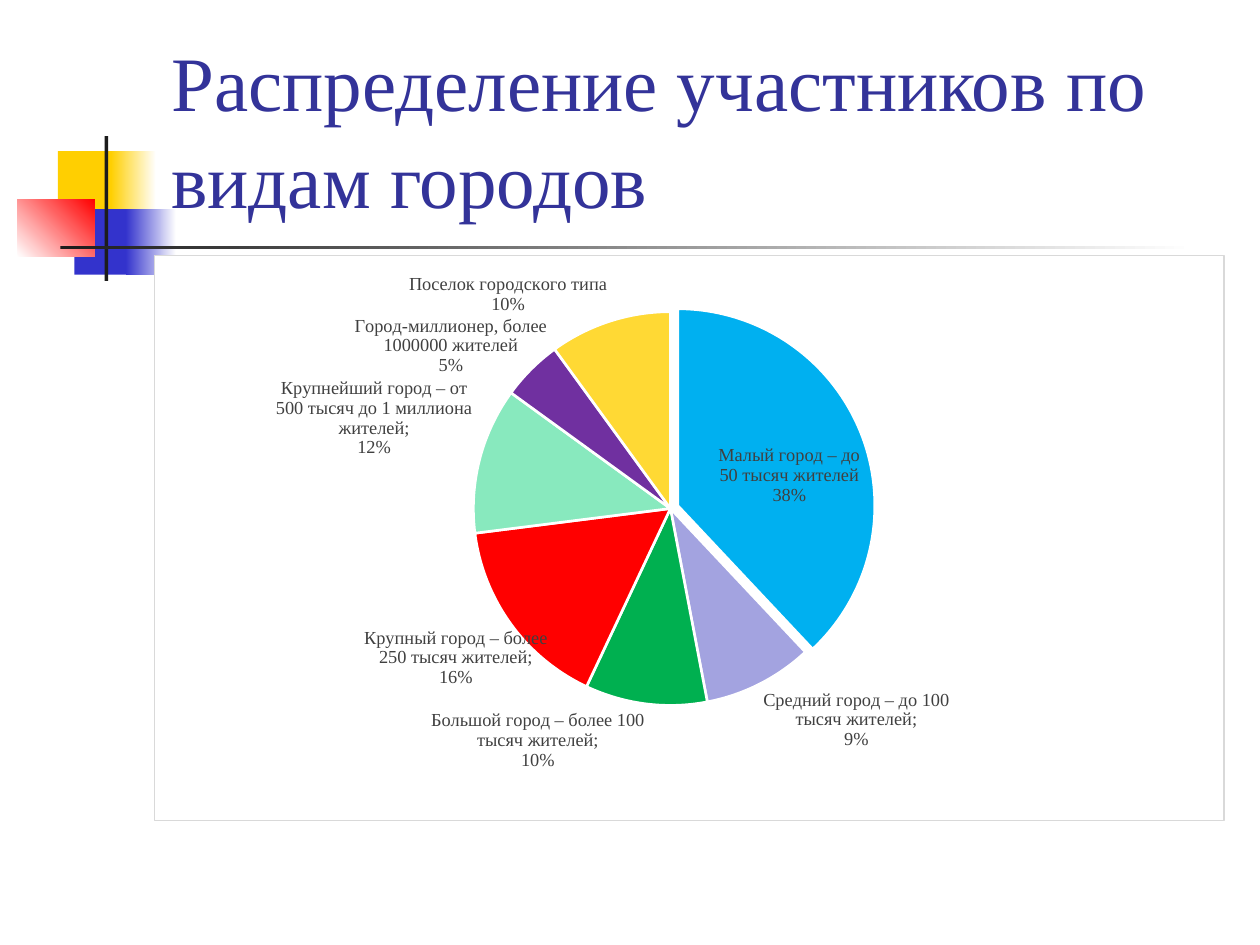
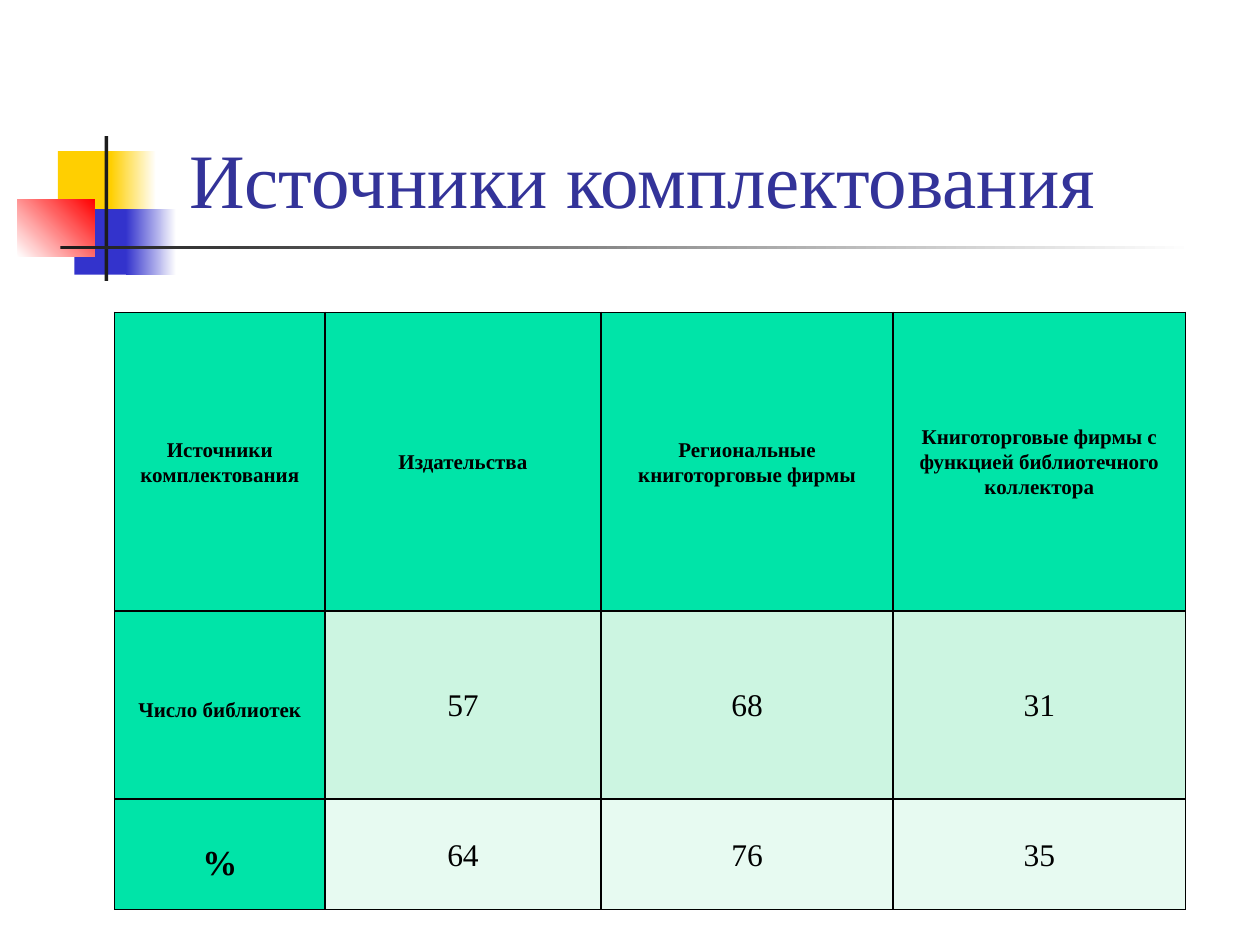
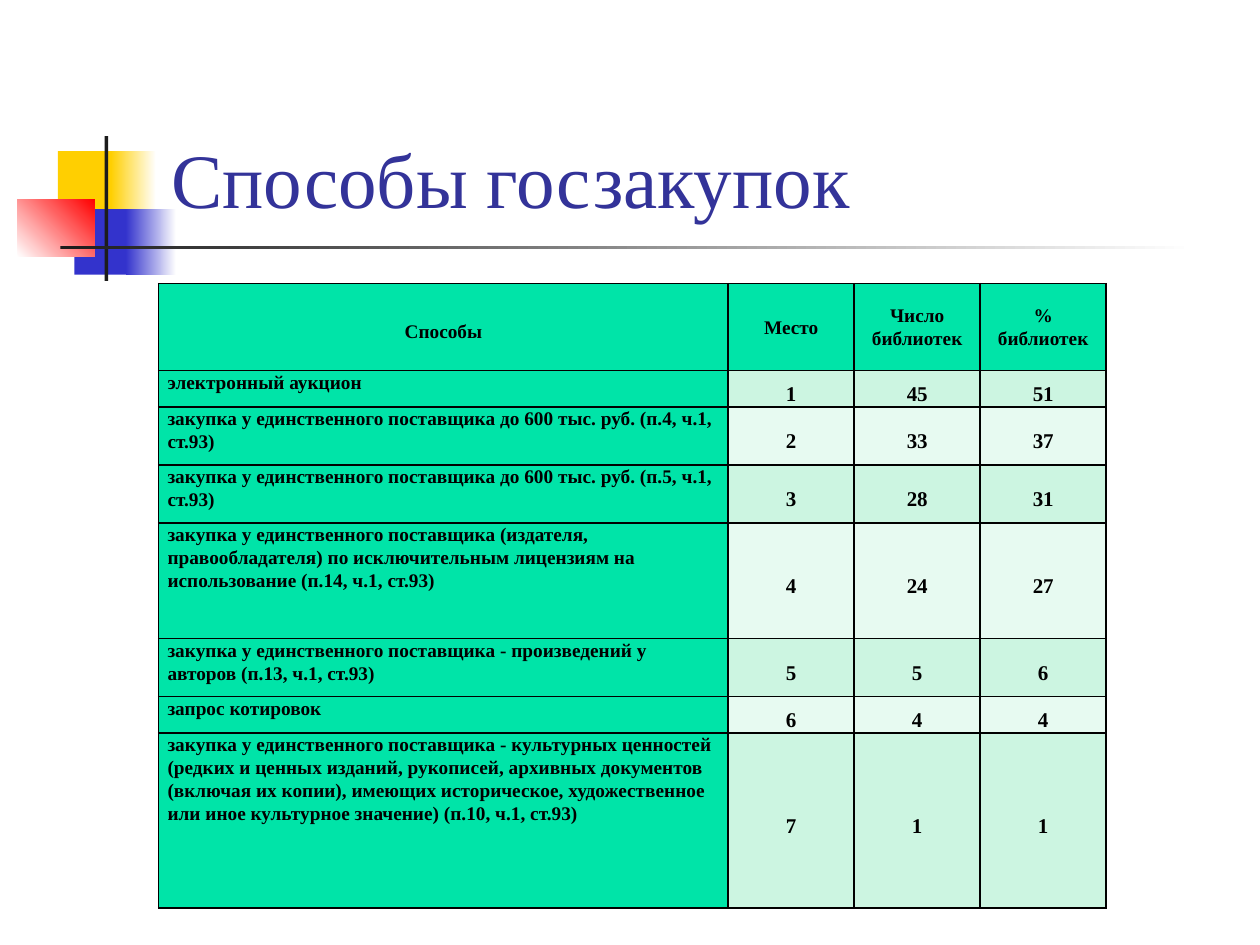
from lxml.etree import SubElement
from pptx import Presentation
from pptx.chart.data import CategoryChartData
from pptx.dml.color import RGBColor
from pptx.enum.chart import XL_CHART_TYPE, XL_LABEL_POSITION
from pptx.enum.shapes import MSO_SHAPE
from pptx.enum.text import MSO_ANCHOR, MSO_AUTO_SIZE, PP_ALIGN
from pptx.oxml import parse_xml
from pptx.oxml.ns import nsdecls, qn
from pptx.util import Inches, Pt

FONT = "Times New Roman"
WHITE = RGBColor(0xFF, 0xFF, 0xFF)
BLACK = RGBColor(0, 0, 0)
INK = RGBColor(0x1C, 0x1C, 0x1C)
YELLOW = RGBColor(0xFF, 0xCF, 0x01)
BLUE = RGBColor(0x33, 0x33, 0xCC)
RED = RGBColor(0xFF, 0, 0)
TITLE_BLUE = RGBColor(0x33, 0x33, 0x99)
LABEL_GREY = RGBColor(0x40, 0x40, 0x40)
HEAD_GREEN = RGBColor(0, 0xE4, 0xA8)
BANDS = [RGBColor(0xCC, 0xF5, 0xE1), RGBColor(0xE7, 0xFA, 0xF1)]

DECOR = [
    ((0.46, 1.2, 0.48, 0.52), (YELLOW,), 0),
    ((0.88, 1.2, 0.36, 0.52), (YELLOW, WHITE), 0),
    ((0.59, 1.66, 0.46, 0.52), (BLUE,), 0),
    ((1, 1.66, 0.4, 0.52), (BLUE, WHITE), 0),
    ((0.14, 1.58, 0.61, 0.46), (WHITE, RED), 45),
    ((0.83, 1.08, 0.03, 1.15), (INK,), 0),
    ((0.48, 1.95, 9, 0.03), (INK, WHITE), 0),
]
TITLE_AT = (1.26, 0.23, 8.52, 1.6)

CITIES = [
    ("Малый город – до 50 тысяч жителей", 38, RGBColor(0, 0xB0, 0xF0)),
    ("Средний город – до 100 тысяч жителей;", 9, RGBColor(0xA3, 0xA3, 0xE0)),
    ("Большой город – более 100 тысяч жителей;", 10, RGBColor(0, 0xB0, 0x50)),
    ("Крупный город – более 250 тысяч жителей;", 16, RED),
    ("Крупнейший город – от 500 тысяч до 1 миллиона жителей;", 12, RGBColor(0x88, 0xE9, 0xBE)),
    ("Город-миллионер, более 1000000 жителей", 5, RGBColor(0x70, 0x30, 0xA0)),
    ("Поселок городского типа", 10, RGBColor(0xFF, 0xD9, 0x34)),
]
LABEL_SHIFTS = {3: (0.04, 0), 5: (0.02, 0.02)}
PLOT = {"x": 0.177, "y": 0.1, "w": 0.611, "h": 0.696}

SOURCES = [
    ("Источники комплектования", "Издательства", "Региональные книготорговые фирмы",
     "Книготорговые фирмы с функцией библиотечного коллектора"),
    ("Число библиотек", 57, 68, 31),
    ("%", 64, 76, 35),
]
METHODS = [
    ("Способы", "Место", "Число библиотек", "% библиотек"),
    ("электронный аукцион", 1, 45, 51),
    ("закупка у единственного поставщика до 600 тыс. руб. (п.4, ч.1, ст.93)", 2, 33, 37),
    ("закупка у единственного поставщика до 600 тыс. руб. (п.5, ч.1, ст.93)", 3, 28, 31),
    ("закупка у единственного поставщика (издателя, правообладателя) по исключительным "
     "лицензиям на использование (п.14, ч.1, ст.93)", 4, 24, 27),
    ("закупка у единственного поставщика - произведений у авторов (п.13, ч.1, ст.93)", 5, 5, 6),
    ("запрос котировок", 6, 4, 4),
    ("закупка у единственного поставщика - культурных ценностей (редких и ценных изданий, "
     "рукописей, архивных документов (включая их копии), имеющих историческое, художественное "
     "или иное культурное значение) (п.10, ч.1, ст.93)", 7, 1, 1),
]


def box(at):
    return [Inches(v) for v in at]


def set_all(obj, **values):
    for name, value in values.items():
        setattr(obj, name, value)


def set_font(font, size, color, **values):
    set_all(font, name=FONT, size=Pt(size), **values)
    font.color.rgb = color


def style_layout(layout, s):
    tree = layout.shapes.element
    for i, (at, colors, angle) in enumerate(DECOR):
        sp = s.shapes.add_shape(MSO_SHAPE.RECTANGLE, *box(at))
        sp.shadow.inherit = False
        sp.line.fill.background()
        if len(colors) == 1:
            sp.fill.solid()
            sp.fill.fore_color.rgb = colors[0]
        else:
            sp.fill.gradient()
            sp.fill.gradient_angle = angle
            for stop, color in zip(sp.fill.gradient_stops, colors):
                stop.color.rgb = color
        tree.insert(2 + i, sp.element)
    title = layout.placeholders[0]
    set_all(title, **dict(zip(("left", "top", "width", "height"), box(TITLE_AT))))
    set_all(title.text_frame, vertical_anchor=MSO_ANCHOR.BOTTOM,
            auto_size=MSO_AUTO_SIZE.NONE, word_wrap=True)


def add_title(s, text, indent=0):
    p = s.shapes.title.text_frame.paragraphs[0]
    set_all(p, alignment=PP_ALIGN.LEFT, line_spacing=1.05)
    p._p.get_or_add_pPr().set("marL", str(Inches(indent)))
    r = p.add_run()
    r.text = text
    set_font(r.font, 44, TITLE_BLUE)


def manual_layout(values, target=""):
    parts = "".join(f'<c:{k} val="{v}"/>' for k, v in values)
    return parse_xml(f'<c:layout {nsdecls("c")}><c:manualLayout>{target}{parts}'
                     '</c:manualLayout></c:layout>')


def add_city_chart(s):
    data = CategoryChartData()
    data.categories = [name for name, _, _ in CITIES]
    data.add_series("Series 1", [value for _, value, _ in CITIES])
    chart = s.shapes.add_chart(XL_CHART_TYPE.PIE, *box((1.22, 2.02, 8.5, 4.5)), data).chart
    set_all(chart, has_title=False, has_legend=False)
    set_font(chart.font, 10.5, BLACK)
    plot = chart.plots[0]
    plot.vary_by_categories = True
    series = plot.series[0]

    for i, (_, _, color) in enumerate(CITIES):
        fmt = series.points[i].format
        fmt.fill.solid()
        fmt.fill.fore_color.rgb = color
        fmt.line.color.rgb = WHITE
        fmt.line.width = Pt(1.5)
    idx = series._element.xpath("c:dPt/c:idx")[0]
    idx.addnext(parse_xml(f'<c:explosion {nsdecls("c")} val="4"/>'))

    labels = [series.data_labels] + [series.points[i].data_label for i in LABEL_SHIFTS]
    for label in labels:
        set_font(label.font, 10.5, LABEL_GREY)
        label.position = XL_LABEL_POSITION.BEST_FIT
    for el in series._element.xpath("c:dLbls | c:dLbls/c:dLbl"):
        for name, val in (("showVal", "0"), ("showCatName", "1"), ("showPercent", "1")):
            el.find(qn(f"c:{name}")).set("val", val)
        separator = parse_xml(f'<c:separator {nsdecls("c")}>\n</c:separator>')
        el.find(qn("c:showBubbleSize")).addnext(separator)
    for el in series._element.xpath("c:dLbls/c:dLbl"):
        idx = el.find(qn("c:idx"))
        idx.addnext(manual_layout(zip("xy", LABEL_SHIFTS[int(idx.get("val"))])))

    area = chart._chartSpace.xpath("c:chart/c:plotArea")[0]
    for old in area.xpath("c:layout"):
        area.remove(old)
    modes = [("xMode", "edge"), ("yMode", "edge")]
    area.insert(0, manual_layout(modes + list(PLOT.items()), '<c:layoutTarget val="inner"/>'))
    chart._chartSpace.find(qn("c:chart")).addnext(parse_xml(
        f'<c:spPr {nsdecls("c", "a")}><a:solidFill><a:srgbClr val="{WHITE}"/></a:solidFill>'
        '<a:ln w="9525"><a:solidFill><a:srgbClr val="D9D9D9"/></a:solidFill></a:ln></c:spPr>'))


def add_borders(cell):
    tcPr = cell._tc.get_or_add_tcPr()
    for side in "LRTB":
        ln = SubElement(tcPr, qn(f"a:ln{side}"), w=str(Pt(1)))
        SubElement(SubElement(ln, qn("a:solidFill")), qn("a:srgbClr"), val=str(BLACK))


def source_style(row, col):
    size = 12 if row == 0 else 18 if col else 20 if row == 2 else 12
    return dict(size=size, bold=row == 0 or col == 0, after=8 if row else 0,
                spacing=1.5 if row and col == 0 else 1.07)


def method_style(row, col):
    return dict(size=12 if row and col else 11, bold=True, after=0, left=row > 0 and col == 0,
                spacing=1.5 if (row == 0) == (col == 0) else 1.07)


def add_grid(s, rows, left, top, widths, heights, style):
    at = (left, top, sum(widths), sum(heights))
    table = s.shapes.add_table(len(rows), len(widths), *box(at)).table
    set_all(table, first_row=False, horz_banding=False)
    for column, width in zip(table.columns, widths):
        column.width = Inches(width)
    for i, (values, height) in enumerate(zip(rows, heights)):
        table.rows[i].height = Inches(height)
        for j, value in enumerate(values):
            look = style(i, j)
            at_left = look.get("left")
            cell = table.cell(i, j)
            add_borders(cell)
            cell.fill.solid()
            cell.fill.fore_color.rgb = BANDS[(i - 1) % 2] if i and j else HEAD_GREEN
            set_all(cell, margin_left=Inches(0.07), margin_right=Inches(0.07),
                    margin_top=0, margin_bottom=0,
                    vertical_anchor=MSO_ANCHOR.TOP if at_left else MSO_ANCHOR.MIDDLE)
            p = cell.text_frame.paragraphs[0]
            set_all(p, alignment=PP_ALIGN.LEFT if at_left else PP_ALIGN.CENTER,
                    line_spacing=look["spacing"], space_after=Pt(look["after"]))
            r = p.add_run()
            r.text = str(value)
            set_font(r.font, look["size"], BLACK, bold=look["bold"])


def main():
    prs = Presentation()
    set_all(prs, slide_width=Inches(10), slide_height=Inches(7.5))
    layout = prs.slide_layouts[5]
    cities, sources, methods = [prs.slides.add_slide(layout) for _ in range(3)]
    style_layout(layout, cities)

    add_title(cities, "Распределение участников по видам городов")
    add_city_chart(cities)

    add_title(sources, "Источники комплектования", indent=0.14)
    add_grid(sources, SOURCES, 0.91, 2.48, (1.67, 2.19, 2.32, 2.32),
             (2.37, 1.49, 0.88), source_style)

    add_title(methods, "Способы госзакупок")
    add_grid(methods, METHODS, 1.26, 2.25, (4.52, 1, 1, 1),
             (0.69, 0.29, 0.46, 0.46, 0.92, 0.46, 0.29, 1.39), method_style)
    prs.save("out.pptx")


if __name__ == "__main__":
    main()
